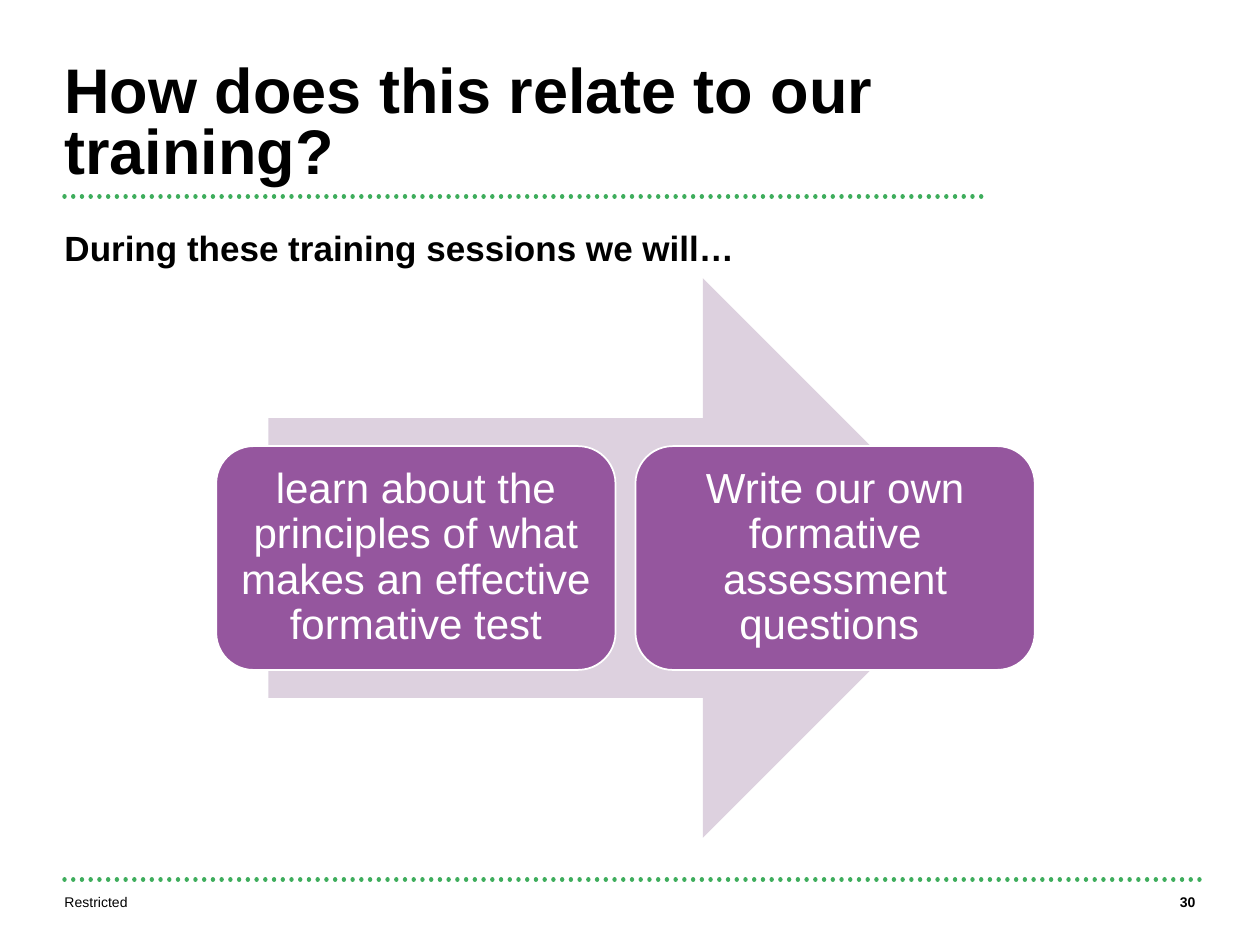
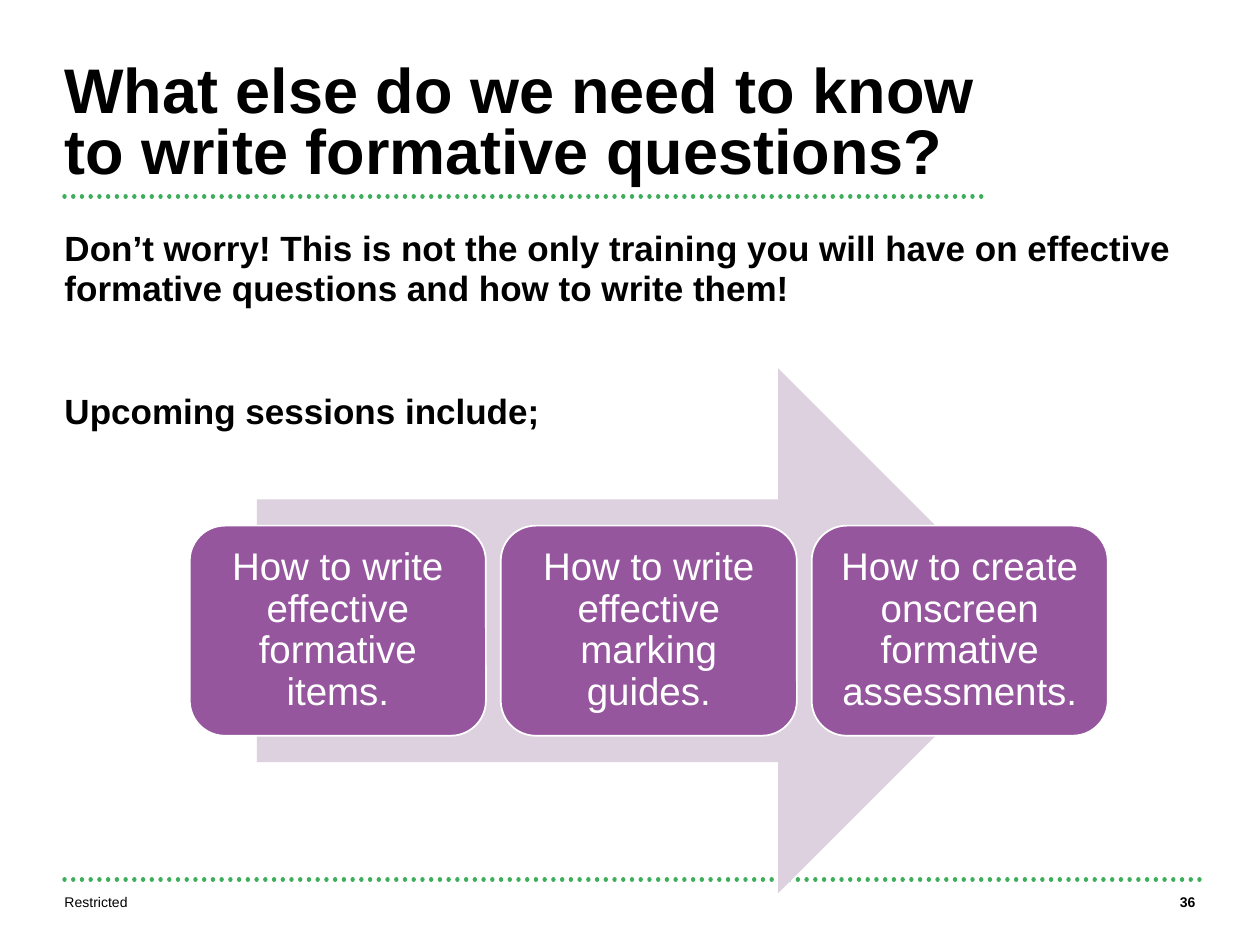
from lxml import etree
from pptx import Presentation
from pptx.dml.color import RGBColor
from pptx.enum.dml import MSO_LINE
from pptx.enum.shapes import MSO_CONNECTOR, MSO_SHAPE
from pptx.enum.text import MSO_ANCHOR, MSO_AUTO_SIZE, PP_ALIGN
from pptx.oxml.ns import qn
from pptx.util import Cm, Pt

LEFT, CENTER, RIGHT = PP_ALIGN.LEFT, PP_ALIGN.CENTER, PP_ALIGN.RIGHT
TOP, MIDDLE = MSO_ANCHOR.TOP, MSO_ANCHOR.MIDDLE
STRAIGHT = MSO_CONNECTOR.STRAIGHT
RIGHT_ARROW, ROUNDED = MSO_SHAPE.RIGHT_ARROW, MSO_SHAPE.ROUNDED_RECTANGLE

FONT = "Arial"
BLACK, WHITE = "000000", "FFFFFF"
GREEN, PURPLE, LILAC = "3EAD5C", "95569E", "DDD1DF"

# Boxes are left, top, width, height in cm
MARGIN = 1.3
TITLE_BOX = (MARGIN, 1.3, 18.52, 2.49)
BODY_BOX = (MARGIN, 4.6, 22.6, 12.3)
FOOTER_BOX = (MARGIN, 18.01, 15.24, 0.71)
NUMBER_BOX = (22.7, 18.01, 1.4, 0.71)
DOTTED_RULES = [(17.73, 24.2), (3.96, 19.8)]  # height on the slide, right end
FOOTER = "Restricted"

# Each body entry is a text and the space before it in points
SLIDES = [
    {
        "title": "How does this relate to our training?",
        "body": [("During these training sessions we will…", 0)],
        "number": "30",
        "arrow": (5.41, 5.61, 14.4, 11.28),
        "card_width": 8.05,
        "card_inset": 0.25,
        "card_size": 24,
        "cards": [
            "learn about the principles of what makes an effective formative test",
            "Write our own formative assessment questions ",
        ],
    },
    {
        "title": "What else do we need to know to write formative questions?",
        "body": [
            ("Don’t worry! This is not the only training you will have on "
             "effective formative questions and how to write them!", 0),
            ("Upcoming sessions include;", 35),
        ],
        "number": "36",
        "arrow": (5.18, 7.42, 15.8, 10.59),
        "card_width": 5.97,
        "card_inset": 0.23,
        "card_size": 22,
        "cards": [
            "How to write effective formative items.",
            "How to write effective marking guides.",
            "How to create onscreen formative assessments.",
        ],
    },
]


def rgb(color):
    return RGBColor.from_string(color)


def place(shape, box):
    shape.left, shape.top, shape.width, shape.height = map(Cm, box)


def prepare_frame(shape, inset=0, anchor=TOP):
    frame = shape.text_frame
    frame.word_wrap = True
    frame.auto_size = MSO_AUTO_SIZE.NONE
    frame.vertical_anchor = anchor
    frame.margin_left = frame.margin_right = Cm(inset)
    frame.margin_top = frame.margin_bottom = Cm(inset)
    return frame


def write(paragraph, text, size, color=BLACK, bold=False, align=LEFT, spacing=None):
    paragraph.text = text
    paragraph.alignment = align
    paragraph.line_spacing = spacing
    font = paragraph.font
    font.name, font.size, font.bold = FONT, Pt(size), bold
    font.color.rgb = rgb(color)


def remove_bullet(paragraph):
    properties = paragraph._p.get_or_add_pPr()
    properties.set("marL", "0")
    properties.set("indent", "0")
    etree.SubElement(properties, qn("a:buNone"))


def add_dotted_rule(slide, top, right):
    rule = slide.shapes.add_connector(STRAIGHT, Cm(MARGIN), Cm(top), Cm(right), Cm(top))
    rule.line.color.rgb = rgb(GREEN)
    rule.line.width = Pt(2.5)
    rule.line.dash_style = MSO_LINE.ROUND_DOT
    properties = rule._element.spPr
    properties.find(qn("a:ln")).set("cap", "rnd")
    etree.SubElement(properties, qn("a:effectLst"))


def add_label(slide, text, box, bold=False, align=LEFT):
    label = slide.shapes.add_textbox(*map(Cm, box))
    write(prepare_frame(label).paragraphs[0], text, 8, bold=bold, align=align)


def add_filled_shape(slide, kind, box, color):
    shape = slide.shapes.add_shape(kind, *map(Cm, box))
    shape.shadow.inherit = False
    shape.fill.solid()
    shape.fill.fore_color.rgb = rgb(color)
    shape.line.fill.background()
    return shape


def add_process(slide, content):
    """Draw the arrow and a row of cards centred on it."""
    left, top, width, height = content["arrow"]
    add_filled_shape(slide, RIGHT_ARROW, content["arrow"], LILAC)
    count = len(content["cards"])
    card_width = content["card_width"]
    card_height = 0.4 * height
    gap = card_width / 20
    row_width = count * card_width + (count - 1) * gap
    row_left = left + (width - row_width) / 2
    card_top = top + (height - card_height) / 2
    for index, text in enumerate(content["cards"]):
        box = (row_left + index * (card_width + gap), card_top, card_width, card_height)
        card = add_filled_shape(slide, ROUNDED, box, PURPLE)
        card.line.color.rgb = rgb(WHITE)
        card.line.width = Pt(1)
        frame = prepare_frame(card, content["card_inset"], MIDDLE)
        write(frame.paragraphs[0], text, content["card_size"], WHITE,
              align=CENTER, spacing=0.9)


def add_slide(presentation, content):
    slide = presentation.slides.add_slide(presentation.slide_layouts[1])
    title, body = slide.placeholders
    place(title, TITLE_BOX)
    write(prepare_frame(title).paragraphs[0], content["title"], 36,
          bold=True, spacing=Pt(35))
    place(body, BODY_BOX)
    frame = prepare_frame(body)
    for index, (text, space_before) in enumerate(content["body"]):
        paragraph = frame.add_paragraph() if index else frame.paragraphs[0]
        remove_bullet(paragraph)
        write(paragraph, text, 20, bold=True, spacing=Pt(23))
        paragraph.space_before = Pt(space_before)
        paragraph.space_after = Pt(12)
    for top, right in DOTTED_RULES:
        add_dotted_rule(slide, top, right)
    add_label(slide, FOOTER, FOOTER_BOX)
    add_label(slide, content["number"], NUMBER_BOX, bold=True, align=RIGHT)
    add_process(slide, content)


def main():
    presentation = Presentation()
    presentation.slide_width, presentation.slide_height = Cm(25.4), Cm(19.05)
    for content in SLIDES:
        add_slide(presentation, content)
    presentation.save("out.pptx")


if __name__ == "__main__":
    main()
